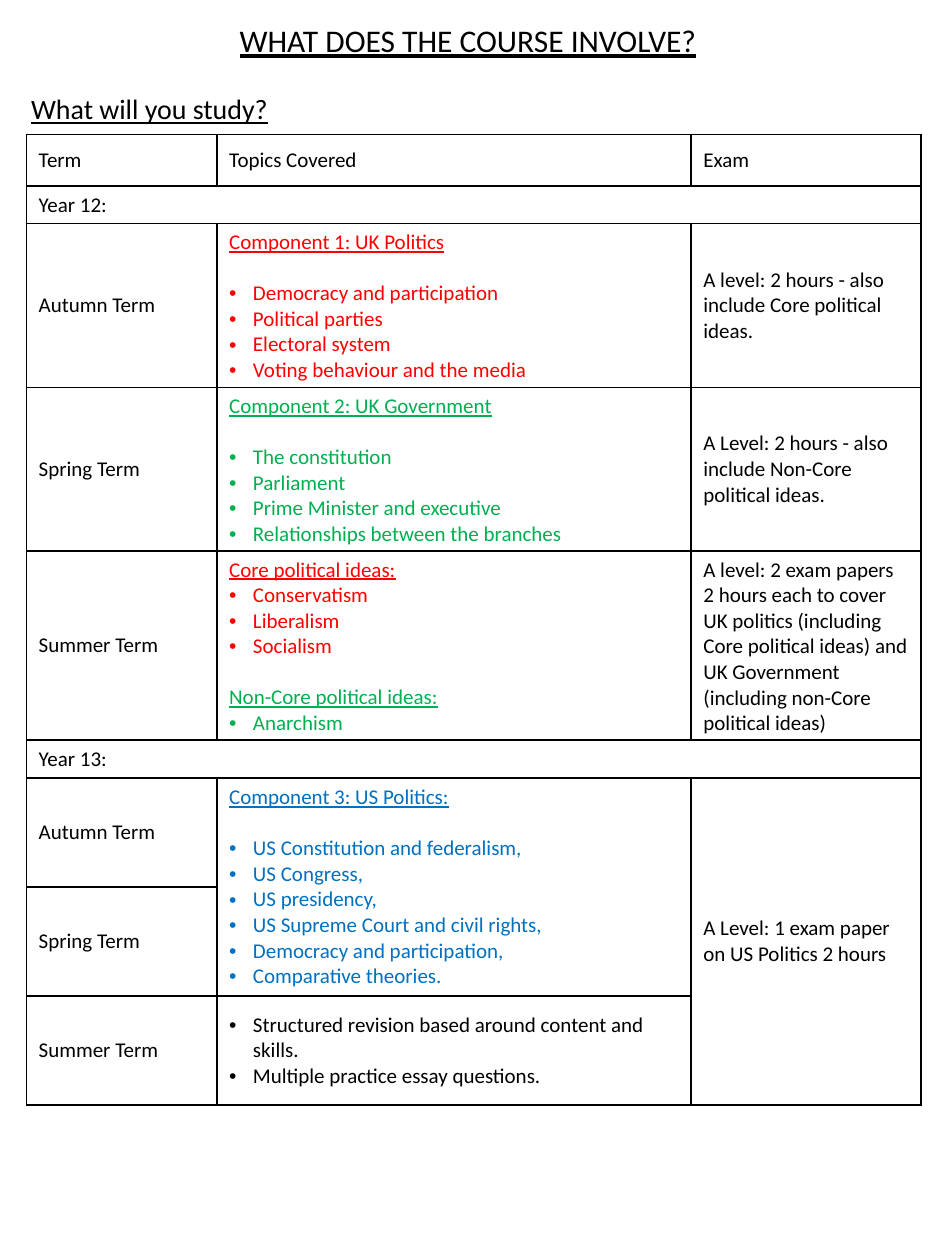
from dataclasses import dataclass

from lxml.etree import SubElement
from pptx import Presentation
from pptx.dml.color import RGBColor
from pptx.enum.text import MSO_ANCHOR, MSO_AUTO_SIZE, PP_ALIGN
from pptx.oxml import parse_xml
from pptx.oxml.ns import nsdecls, qn
from pptx.util import Cm, Pt

BLACK, RED, GREEN, BLUE = "000000", "FF0000", "00B050", "0070C0"
LINE_GAP = 14.6  # one 12 pt line, in points
HANG = Cm(0.48)


@dataclass
class Para:
    text: str
    color: str = BLACK
    size: float = 12
    underline: bool = False
    bullet: bool = False
    before: float = 0
    align: PP_ALIGN = PP_ALIGN.LEFT


@dataclass
class CellText:
    row: int
    col: int
    paras: list[Para]
    rows: int = 1
    cols: int = 1


def rgb(color: str) -> RGBColor:
    return RGBColor.from_string(color)


def plain(text: str) -> list[Para]:
    return [Para(text)]


def bullets(*items: str, color: str = BLACK) -> list[Para]:
    return [Para(item, color, bullet=True) for item in items]


def topic(heading: str, color: str, *items: str,
          before: float = 0, gap: float = 0) -> list[Para]:
    """An underlined heading and its bullets, with optional gaps."""
    points = bullets(*items, color=color)
    points[0].before = gap
    return [Para(heading, color, underline=True, before=before), *points]


def write(tf, paras: list[Para]) -> None:
    tf.word_wrap = True
    for i, para in enumerate(paras):
        p = tf.paragraphs[0] if i == 0 else tf.add_paragraph()
        p.alignment = para.align
        p.space_before = Pt(para.before)
        if para.bullet:
            pPr = p._p.get_or_add_pPr()
            pPr.set("marL", str(HANG))
            pPr.set("indent", str(-HANG))
            SubElement(pPr, qn("a:buFont"), typeface="Arial")
            SubElement(pPr, qn("a:buChar"), char="•")
        r = p.add_run()
        r.text = para.text
        font = {"name": "Calibri", "size": Pt(para.size),
                "underline": para.underline, "bold": False}
        for name, value in font.items():
            setattr(r.font, name, value)
        r.font.color.rgb = rgb(para.color)


def place(s, left: float, top: float, width: float, height: float) -> None:
    box = {"left": left, "top": top, "width": width, "height": height}
    for name, value in box.items():
        setattr(s, name, Cm(value))


def format_cell(cell) -> None:
    """No fill, middle anchor and a 1 pt black border on each side."""
    style = {"vertical_anchor": MSO_ANCHOR.MIDDLE,
             "margin_left": Cm(0.25), "margin_right": Cm(0.25),
             "margin_top": Cm(0.12), "margin_bottom": Cm(0.12)}
    for name, value in style.items():
        setattr(cell, name, value)
    cell.fill.background()
    tcPr = cell._tc.get_or_add_tcPr()
    for i, side in enumerate("LRTB"):
        tcPr.insert(i, parse_xml(
            f'<a:ln{side} {nsdecls("a")} w="{Pt(1)}"><a:solidFill>'
            f'<a:srgbClr val="{BLACK}"/></a:solidFill></a:ln{side}>'))


COLUMNS = [3.84, 9.56, 4.64]
ROWS = [1.04, 0.76, 3.3, 3.3, 3.81, 0.76, 2.2, 2.2, 2.2]
TERMS = ["Autumn Term", "Spring Term", "Summer Term"]

CELLS = [
    *(CellText(0, col, plain(text))
      for col, text in enumerate(["Term", "Topics Covered", "Exam"])),
    # Year bands, each followed by its three terms
    CellText(1, 0, plain("Year 12:"), cols=3),
    CellText(5, 0, plain("Year 13:"), cols=3),
    *(CellText(start + i, 0, plain(term))
      for start in (2, 6) for i, term in enumerate(TERMS)),
    # Topics
    CellText(2, 1, topic(
        "Component 1: UK Politics", RED, "Democracy and participation",
        "Political parties", "Electoral system",
        "Voting behaviour and the media", gap=LINE_GAP)),
    CellText(3, 1, topic(
        "Component 2: UK Government", GREEN, "The constitution", "Parliament",
        "Prime Minister and executive",
        "Relationships between the branches", gap=LINE_GAP)),
    CellText(4, 1, [
        *topic("Core political ideas:", RED,
               "Conservatism", "Liberalism", "Socialism"),
        *topic("Non-Core political ideas:", GREEN, "Anarchism",
               before=LINE_GAP)]),
    CellText(6, 1, topic(
        "Component 3: US Politics:", BLUE, "US Constitution and federalism,",
        "US Congress,", "US presidency,", "US Supreme Court and civil rights,",
        "Democracy and participation,", "Comparative theories.",
        gap=LINE_GAP), rows=2),
    CellText(8, 1, bullets(
        "Structured revision based around content and skills.",
        "Multiple practice essay questions.")),
    # Exams
    CellText(2, 2, plain(
        "A level: 2 hours - also include Core political ideas.")),
    CellText(3, 2, plain(
        "A Level: 2 hours - also include Non-Core political ideas.")),
    CellText(4, 2, plain(
        "A level: 2 exam papers 2 hours each to cover UK politics (including "
        "Core political ideas) and UK Government (including non-Core "
        "political ideas)")),
    CellText(6, 2, plain("A Level: 1 exam paper on US Politics 2 hours"),
             rows=3),
]


def add_course_table(sp) -> None:
    table = sp.add_table(len(ROWS), len(COLUMNS), Cm(0.53), Cm(2.71),
                         Cm(sum(COLUMNS)), Cm(sum(ROWS))).table
    table.first_row = table.horz_banding = False
    for column, width in zip(table.columns, COLUMNS):
        column.width = Cm(width)
    for row, height in zip(table.rows, ROWS):
        row.height = Cm(height)
    for cell in table.iter_cells():
        format_cell(cell)
    for item in CELLS:
        cell = table.cell(item.row, item.col)
        if item.rows > 1 or item.cols > 1:
            cell.merge(table.cell(item.row + item.rows - 1,
                                  item.col + item.cols - 1))
        write(cell.text_frame, item.paras)


def main() -> None:
    prs = Presentation()
    prs.slide_width, prs.slide_height = Cm(19.05), Cm(25.4)
    slide = prs.slides.add_slide(prs.slide_layouts[5])
    sp = slide.shapes

    # Title and subheading
    title = sp.title
    place(title, 0.33, 0.3, 18.21, 1.02)
    title.text_frame.auto_size = MSO_AUTO_SIZE.NONE
    title.text_frame.vertical_anchor = MSO_ANCHOR.TOP
    write(title.text_frame, [Para("WHAT DOES THE COURSE INVOLVE?", size=18,
                                  underline=True, align=PP_ALIGN.CENTER)])
    heading = sp.add_textbox(Cm(0.38), Cm(1.73), Cm(18.34), Cm(1.96))
    write(heading.text_frame,
          [Para("What will you study?", size=16, underline=True)])

    # Course plan
    add_course_table(sp)
    prs.save("out.pptx")


if __name__ == "__main__":
    main()
